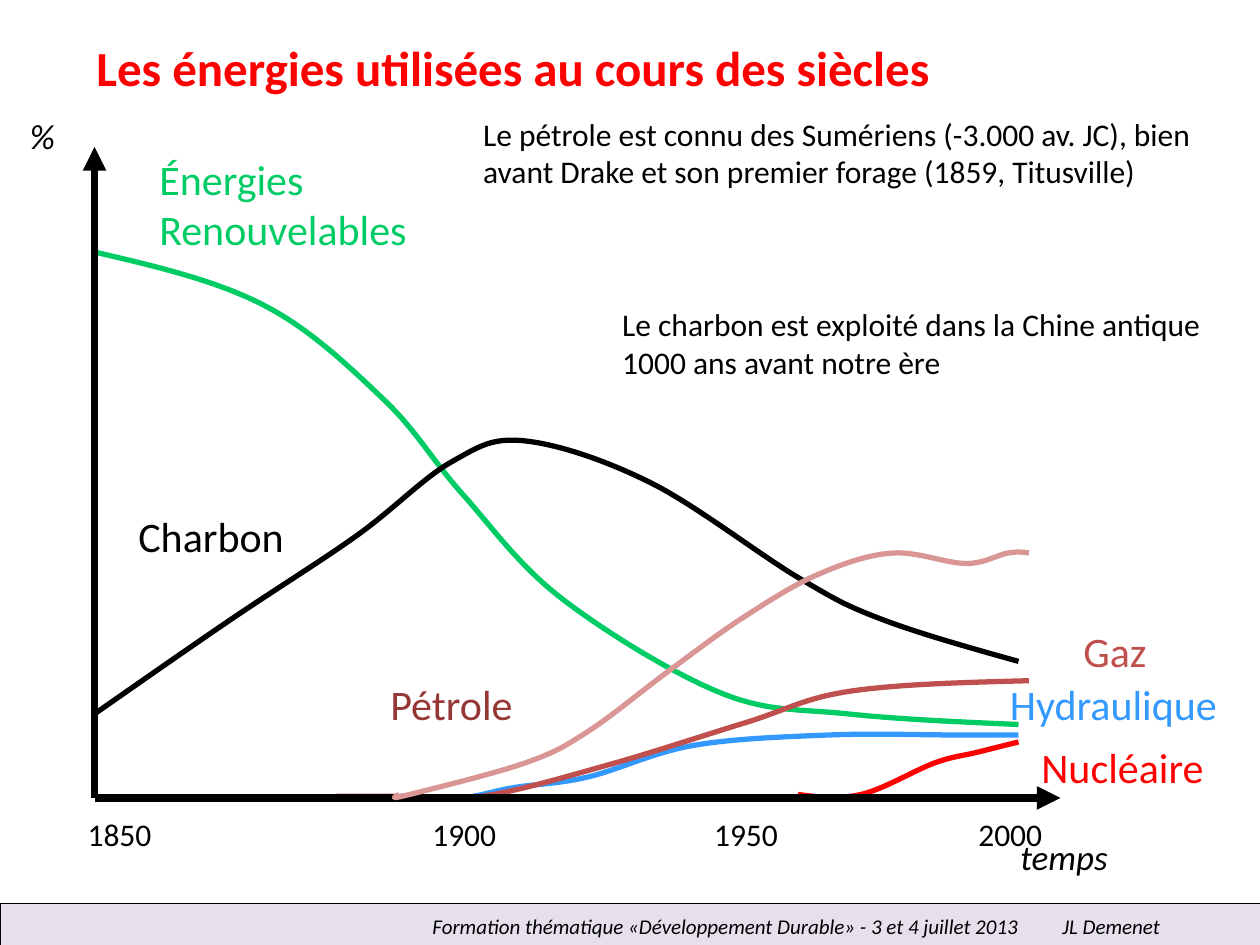
from lxml import etree
from pptx import Presentation, util as u
from pptx.dml import color
from pptx.enum import shapes, text
from pptx.oxml import ns

Pt = u.Pt
THEME = {
    "font": "Calibri",
    "black": "000000", "white": "FFFFFF", "red": "FF0000",
    "renewables": "00CC66", "hydro": "3399FF", "gas": "C0504D",
    "oil": "D99694", "oil_label": "953735", "footer": "E6E0EC",
    "title": 28, "series": 24, "axis": 20, "body": 18, "small": 12,
    "curve": 3, "arrow": 4.5,
}

deck = Presentation()
deck.slide_width, deck.slide_height = Pt(720), Pt(540)
slide = deck.slides.add_slide(deck.slide_layouts[6])


def rgb(name):
    return color.RGBColor.from_string(THEME[name])


def add_label(words, left, top, width, height, size, ink="black", align="LEFT", **style):
    label = slide.shapes.add_textbox(Pt(left), Pt(top), Pt(width), Pt(height))
    frame = label.text_frame
    frame.word_wrap = True
    frame.auto_size = text.MSO_AUTO_SIZE.SHAPE_TO_FIT_TEXT
    paragraph = frame.paragraphs[0]
    paragraph.alignment = text.PP_ALIGN[align]
    run = paragraph.add_run()
    run.text = words
    run.font.color.rgb = rgb(ink)
    for key, value in {"name": THEME["font"], "size": Pt(THEME[size]), **style}.items():
        setattr(run.font, key, value)
    return label


# Energy curves: the points each one passes through
curves = [
    ("renewables", [(54, 144), (150, 174), (219, 228), (264, 282), (321, 342),
                    (412, 396), (485, 408), (582, 414)]),
    ("hydro", [(234, 456), (264, 456), (294, 450), (336, 444), (396, 426),
               (474, 420), (546, 420), (582, 420)]),
    ("gas", [(192, 455), (228, 455), (276, 455), (348, 437), (426, 413),
             (486, 395), (588, 389)]),
    ("red", [(456, 454), (492, 454), (534, 436), (558, 430), (582, 424)]),
    ("black", [(54, 408), (132, 354), (204, 306), (258, 264), (300, 252),
               (372, 276), (456, 330), (504, 354), (582, 378)]),
    ("oil", [(228, 454), (234, 454), (300, 436), (336, 418), (384, 382), (426, 352),
             (468, 328), (510, 316), (552, 322), (576, 316), (588, 316)]),
]

# Axes are drawn after the first four curves, below coal and oil
axis_ends = [(54, 84), (606, 456)]
for order, (ink, knots) in enumerate(curves):
    if order == 4:
        for end_x, end_y in axis_ends:
            axis = slide.shapes.add_connector(
                shapes.MSO_CONNECTOR.STRAIGHT, Pt(54), Pt(456), Pt(end_x), Pt(end_y))
            axis.line.color.rgb = rgb("black")
            axis.line.width = Pt(THEME["arrow"])
            etree.SubElement(axis.line._get_or_add_ln(), ns.qn("a:tailEnd"), type="triangle")
            etree.SubElement(axis._element.spPr, ns.qn("a:effectLst"))

    # Handles lie a sixth of the neighbours' distance away from each inner point
    path = [knots[0]]
    for before, here, after in zip(knots, knots[1:], knots[2:]):
        step = [(b - a) / 6 for a, b in zip(before, after)]
        path += [(here[0] - step[0], here[1] - step[1]), here,
                 (here[0] + step[0], here[1] + step[1])]
    path.append(knots[-1])
    # The two end handles are halfway to the nearest inner handle
    path.insert(1, [(a + b) / 2 for a, b in zip(path[0], path[1])])
    path.insert(-1, [(a + b) / 2 for a, b in zip(path[-1], path[-2])])

    points = [(Pt(x), Pt(y)) for x, y in path]
    outline = slide.shapes.build_freeform(*points[0])
    outline.add_line_segments(points[1:], close=False)
    curve = outline.convert_to_shape()
    curve.shadow.inherit = False
    curve.fill.background()
    curve.line.color.rgb = rgb(ink)
    curve.line.width = Pt(THEME["curve"])

    # Every three straight segments become one cubic curve
    segments = list(curve._element.iter(ns.qn("a:lnTo")))
    for first in range(0, len(segments), 3):
        cubic = etree.Element(ns.qn("a:cubicBezTo"))
        segments[first].addprevious(cubic)
        for segment in segments[first:first + 3]:
            cubic.append(segment[0])
            segment.getparent().remove(segment)

# Curve names
for words, left, top, width, height, ink in [
    ("Énergies Renouvelables", 84, 84, 174, 65.5, "renewables"),
    ("Hydraulique", 570, 384, 156, 36, "hydro"),
    ("Gaz", 612, 354, 66, 36, "gas"),
    ("Nucléaire", 588, 420, 132, 36, "red"),
    ("Charbon", 72, 288, 114, 36, "black"),
]:
    add_label(words, left, top, width, height, "series", ink)
oil_name = add_label("Pétrole", 216, 384, 108, 36, "series", "oil_label")
oil_name.line.color.rgb = rgb("white")
oil_name.line.width = Pt(0.75)

# Title, axis names and years
add_label("Les énergies utilisées au cours des siècles", 48, 18, 528, 41,
          "title", "red", bold=True)
add_label("temps", 576, 474, 78, 31, "axis", italic=True)
add_label("%", 10, 62, 36, 31, "axis", italic=True)
for year, left in [("1850", 43), ("1900", 240), ("1950", 401), ("2000", 552)]:
    add_label(year, left, 462, 66, 29, "body")

# Historical remarks
add_label("Le pétrole est connu des Sumériens (-3.000 av. JC), bien avant Drake "
          "et son premier forage (1859, Titusville)", 269, 62, 439, 51, "body")
add_label("Le charbon est exploité dans la Chine antique 1000 ans avant notre ère",
          348.5, 170.6, 360, 51, "body")

# Footer
band = slide.shapes.add_shape(shapes.MSO_SHAPE.RECTANGLE, Pt(0), Pt(516), Pt(720), Pt(24.5))
band.shadow.inherit = False
band.fill.solid()
band.fill.fore_color.rgb = rgb("footer")
band.line.color.rgb = rgb("black")
band.line.width = Pt(0.25)
credit = add_label("Formation thématique «Développement Durable» - 3 et 4 juillet 2013\tJL Demenet",
                   191.5, 518.4, 527, 21.6, "small", align="CENTER", italic=True)
credit.fill.solid()
credit.fill.fore_color.rgb = rgb("footer")

deck.save("out.pptx")
